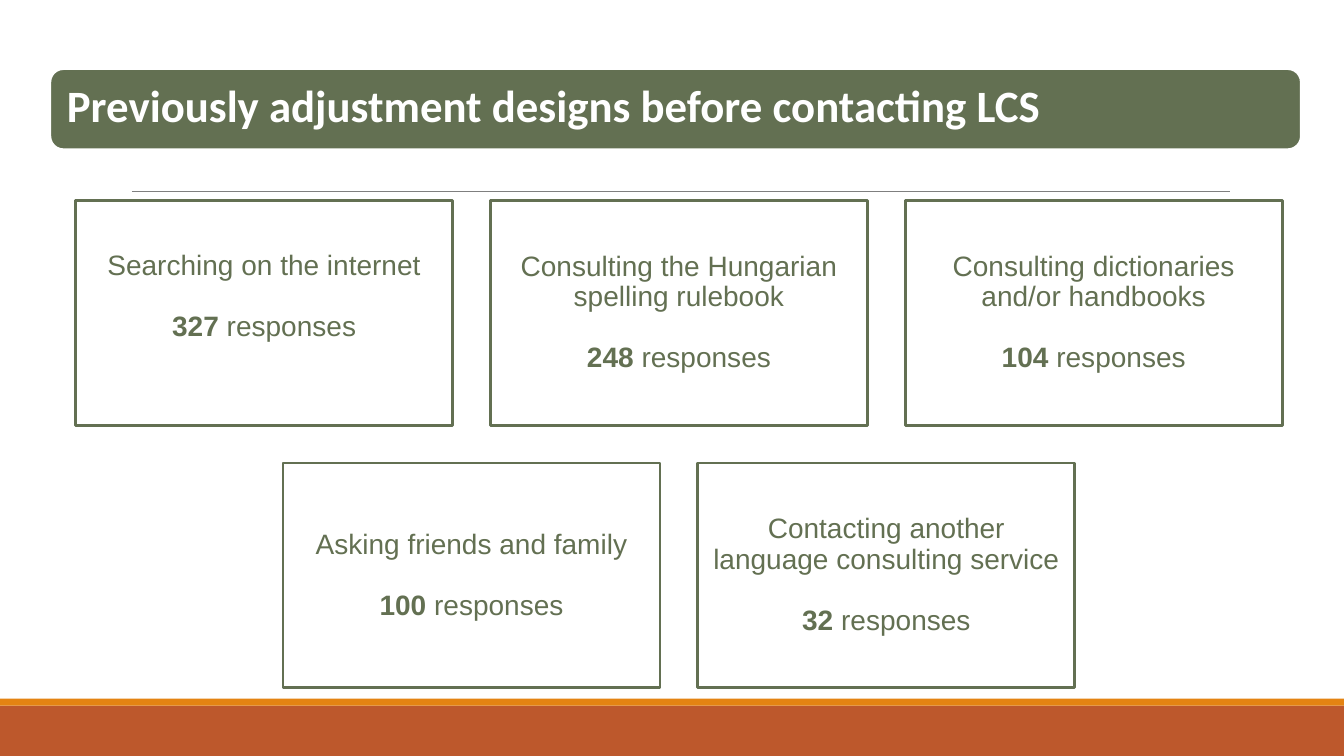
import pptx
import pptx.dml.color
import pptx.enum.shapes
import pptx.enum.text
import pptx.oxml
import pptx.oxml.ns
import pptx.util

Pt = pptx.util.Pt
RGB = pptx.dml.color.RGBColor
SHAPE = pptx.enum.shapes.MSO_SHAPE
ALIGN = pptx.enum.text.PP_ALIGN

WHITE = RGB(0xFF, 0xFF, 0xFF)
OLIVE = RGB(0x63, 0x70, 0x52)
RUST = RGB(0xBD, 0x58, 0x2C)
ORANGE = RGB(0xE4, 0x83, 0x12)
GREY = RGB(0x7F, 0x7F, 0x7F)

TITLE_FONT = {"name": "Calibri", "size": Pt(32), "bold": True}
CARD_FONT = {"name": "Arial", "size": Pt(20), "bold": False}
COUNT_FONT = {**CARD_FONT, "bold": True}

CARD_WIDTH, CARD_HEIGHT = 269.3, 160.6
CARD_GAP = 27
CARD_INSET = 6.5
BLANK_LINE = 22

# Rows of cards: answer, number of responses, extra space under the text
ANSWER_ROWS = [
    [("Searching on the internet", 327, 23),
     ("Consulting the Hungarian spelling rulebook", 248, 0),
     ("Consulting dictionaries and/or handbooks", 104, 0)],
    [("Asking friends and family", 100, 0),
     ("Contacting another language consulting service", 32, 0)],
]


def add_box(slide, kind, box, fill, outline=None):
    shape = slide.shapes.add_shape(kind, *map(Pt, box))
    shape.shadow.inherit = False
    shape.fill.solid()
    shape.fill.fore_color.rgb = fill
    if outline is None:
        shape.line.fill.background()
    else:
        shape.line.color.rgb = outline
        shape.line.width = Pt(2)
    return shape


def set_frame(shape, left, top, right, bottom):
    frame = shape.text_frame
    settings = {
        "word_wrap": True,
        "vertical_anchor": pptx.enum.text.MSO_ANCHOR.MIDDLE,
        "margin_left": Pt(left), "margin_top": Pt(top),
        "margin_right": Pt(right), "margin_bottom": Pt(bottom),
    }
    for key, value in settings.items():
        setattr(frame, key, value)
    return frame


def write(paragraph, pieces, color, **layout):
    for key, value in layout.items():
        setattr(paragraph, key, value)
    for text, font_format in pieces:
        run = paragraph.add_run()
        run.text = text
        run.font.color.rgb = color
        for key, value in font_format.items():
            setattr(run.font, key, value)


def add_footer(slide, box):
    left, top, width, height = box
    stripe = 5
    add_box(slide, SHAPE.RECTANGLE, (left, top + stripe, width, height - stripe), RUST)
    add_box(slide, SHAPE.RECTANGLE, (left, top, width, stripe), ORANGE)


def add_rule(slide, left, top, width):
    rule = slide.shapes.add_connector(
        pptx.enum.shapes.MSO_CONNECTOR.STRAIGHT,
        Pt(left), Pt(top), Pt(left + width), Pt(top))
    rule.line.color.rgb = GREY
    rule.line.width = Pt(0.75)
    # An empty effect list switches the shadow off
    rule._element.spPr.append(
        pptx.oxml.parse_xml("<a:effectLst %s/>" % pptx.oxml.ns.nsdecls("a")))


def add_title(slide, box):
    banner = add_box(slide, SHAPE.ROUNDED_RECTANGLE, box, OLIVE, WHITE)
    # The side insets allow for the rounded corners
    frame = set_frame(banner, 9.4, 9.4, 9.4, 9.4)
    write(frame.paragraphs[0],
          [("Previously adjustment designs before contacting LCS", TITLE_FONT)],
          WHITE, alignment=ALIGN.LEFT, line_spacing=0.85)


def add_card(slide, box, answer, count, space_below):
    card = add_box(slide, SHAPE.RECTANGLE, box, WHITE, OLIVE)
    frame = set_frame(card, CARD_INSET, CARD_INSET, CARD_INSET,
                      CARD_INSET + space_below)
    layout = {"alignment": ALIGN.CENTER, "line_spacing": 0.9}
    write(frame.paragraphs[0], [(answer, CARD_FONT)], OLIVE, **layout)
    write(frame.add_paragraph(),
          [(f"{count} ", COUNT_FONT), ("responses", CARD_FONT)],
          OLIVE, space_before=Pt(BLANK_LINE), **layout)


def add_cards(slide, left, top, width):
    for row, answers in enumerate(ANSWER_ROWS):
        row_width = len(answers) * (CARD_WIDTH + CARD_GAP) - CARD_GAP
        row_left = left + (width - row_width) / 2
        row_top = top + row * (CARD_HEIGHT + CARD_GAP)
        for column, answer in enumerate(answers):
            card_left = row_left + column * (CARD_WIDTH + CARD_GAP)
            add_card(slide, (card_left, row_top, CARD_WIDTH, CARD_HEIGHT), *answer)


def main():
    deck = pptx.Presentation()
    deck.slide_width, deck.slide_height = Pt(960), Pt(540)
    slide = deck.slides.add_slide(deck.slide_layouts[6])
    add_footer(slide, (0, 499, 960, 41))
    add_rule(slide, 94.3, 136.6, 784.5)
    add_title(slide, (35.6, 49, 894, 58))
    add_cards(slide, 54, 143.2, 862)
    deck.save("out.pptx")


if __name__ == "__main__":
    main()
